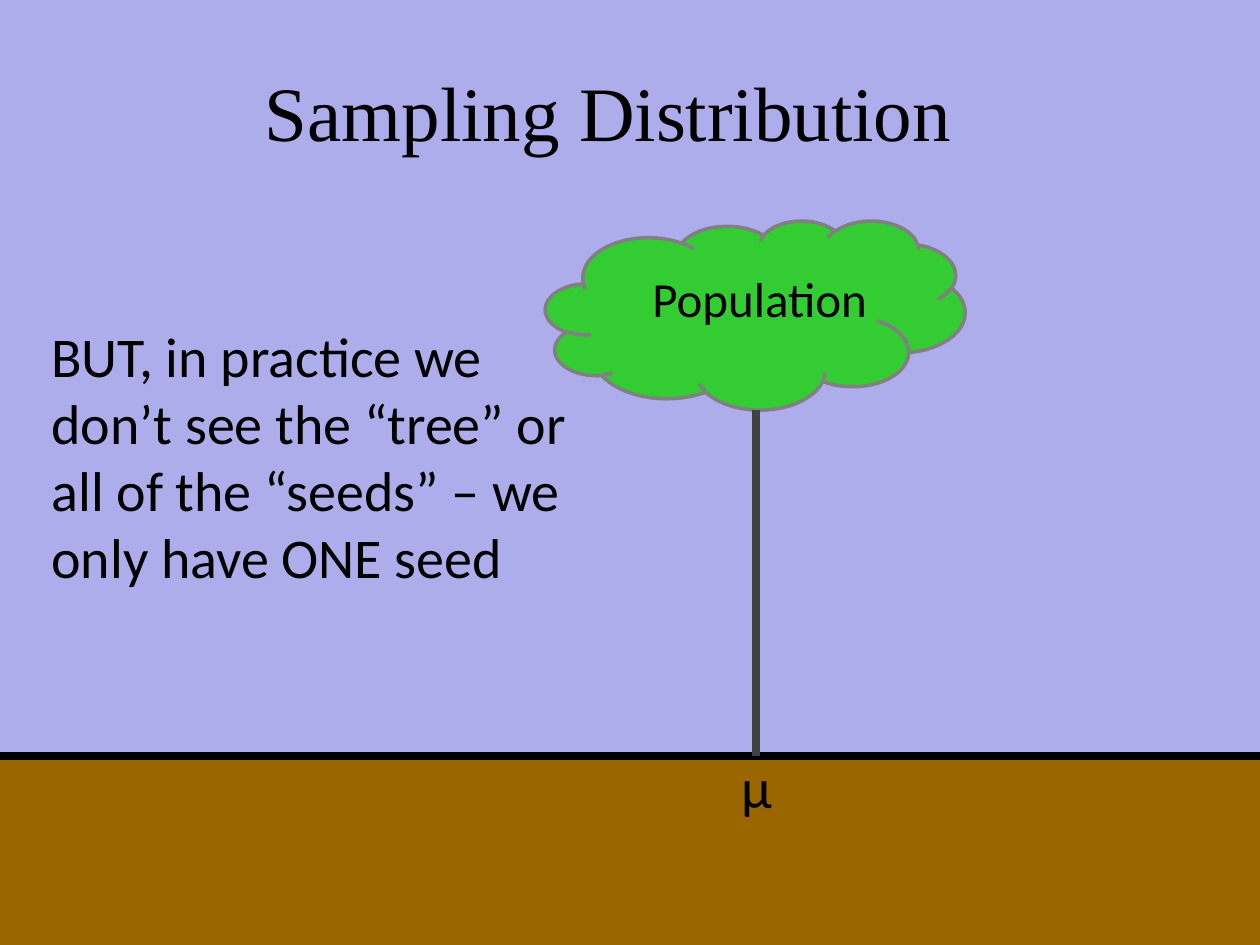
import pptx
import pptx.util
import pptx.dml.color
import pptx.enum.shapes
import pptx.enum.text
import lxml.etree

Inches = pptx.util.Inches
Pt = pptx.util.Pt
RGBColor = pptx.dml.color.RGBColor
Shape = pptx.enum.shapes.MSO_SHAPE
Anchor = pptx.enum.text.MSO_ANCHOR
Align = pptx.enum.text.PP_ALIGN

SKY = RGBColor(0xAD, 0xAD, 0xEB)
SOIL = RGBColor(0x99, 0x66, 0x00)
LEAF = RGBColor(0x33, 0xCC, 0x33)
EDGE = RGBColor(0x80, 0x80, 0x80)
TRUNK = RGBColor(0x40, 0x40, 0x40)
BLACK = RGBColor(0x00, 0x00, 0x00)


def add_text(slide, box, text, size, font="Calibri", align=Align.LEFT, anchor=Anchor.TOP):
    label = slide.shapes.add_textbox(*map(Inches, box))
    frame = label.text_frame
    frame.word_wrap = True
    frame.vertical_anchor = anchor
    frame.text = text
    line = frame.paragraphs[0]
    line.alignment = align
    run = line.runs[0]
    run.font.size = Pt(size)
    run.font.name = font
    run.font.color.rgb = BLACK


def add_line(slide, ends, color):
    line = slide.shapes.add_connector(
        pptx.enum.shapes.MSO_CONNECTOR.STRAIGHT, *map(Inches, ends))
    line.line.color.rgb = color
    line.line.width = Pt(4.5)
    lxml.etree.SubElement(line._element.spPr, pptx.oxml.ns.qn("a:effectLst"))


deck = pptx.Presentation()
deck.slide_width = Inches(10)
deck.slide_height = Inches(7.5)
slide = deck.slides.add_slide(deck.slide_layouts[6])
slide.background.fill.solid()
slide.background.fill.fore_color.rgb = SKY

ground = slide.shapes.add_shape(
    Shape.RECTANGLE, Inches(0), Inches(6), Inches(10), Inches(1.5))
ground.shadow.inherit = False
ground.fill.solid()
ground.fill.fore_color.rgb = SOIL
ground.line.fill.background()

add_text(slide, (0.33, 0.25, 9, 1.25), "Sampling Distribution", 44,
         "Times New Roman", Align.CENTER, Anchor.MIDDLE)
add_line(slide, (0, 6, 10, 6), BLACK)

crown = slide.shapes.add_shape(
    Shape.CLOUD, Inches(4.33), Inches(1.75), Inches(3.33), Inches(1.5))
crown.shadow.inherit = False
crown.fill.solid()
crown.fill.fore_color.rgb = LEAF
crown.line.color.rgb = EDGE
crown.line.width = Pt(2)

add_text(slide, (5.08, 2.08, 2, 0.57), "Population", 28)
add_line(slide, (6, 3.25, 6, 6), TRUNK)
add_text(slide, (5.79, 5.92, 0.58, 0.64), "µ", 32)
add_text(slide, (0.31, 2.5, 4.42, 2.26),
         "BUT, in practice we don’t see the “tree” or all of the “seeds” – we only have ONE seed", 32)

deck.save("out.pptx")
